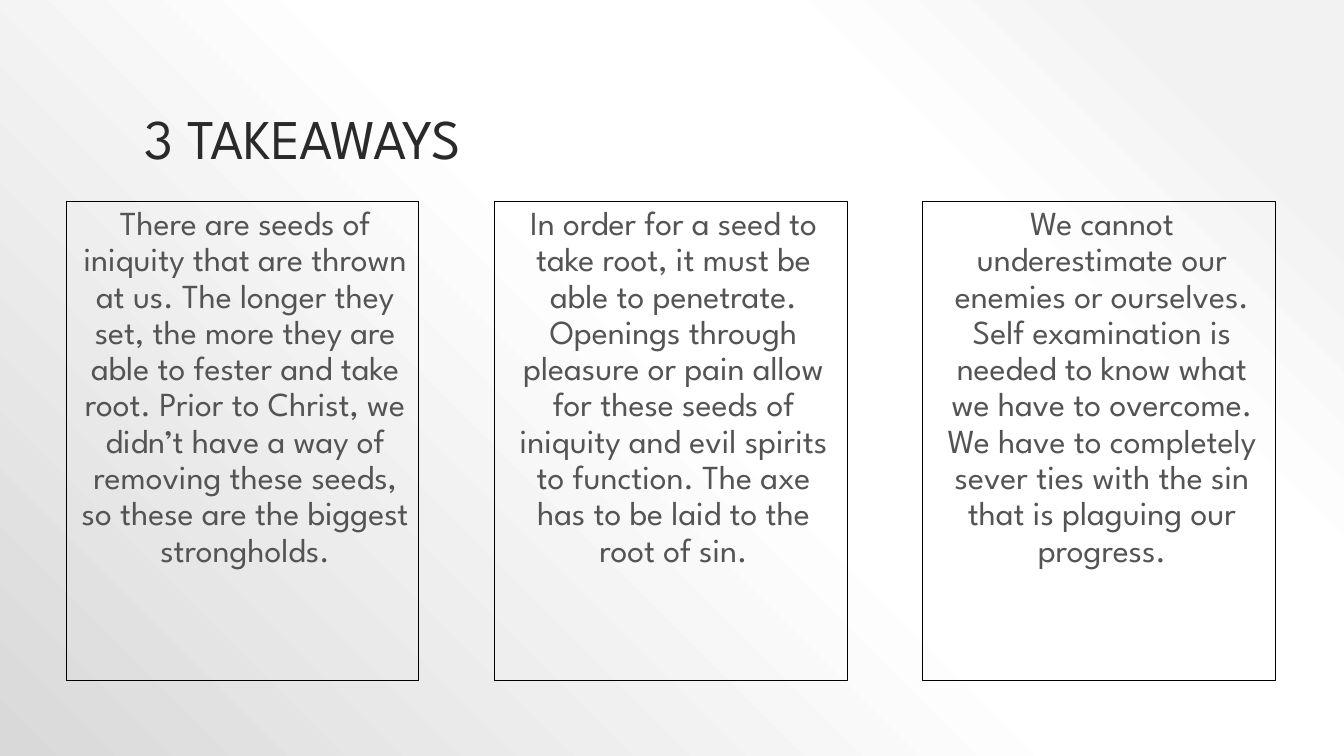
from pptx import Presentation
from pptx.dml.color import RGBColor
from pptx.enum.shapes import MSO_SHAPE
from pptx.enum.text import MSO_ANCHOR, MSO_AUTO_SIZE, PP_ALIGN
from pptx.oxml import parse_xml
from pptx.oxml.ns import nsdecls
from pptx.util import Pt

RECTANGLE = MSO_SHAPE.RECTANGLE
TOP, BOTTOM = MSO_ANCHOR.TOP, MSO_ANCHOR.BOTTOM
LEFT, CENTER = PP_ALIGN.LEFT, PP_ALIGN.CENTER
EMU_PER_PX = 9525  # 96 px to the inch
FONT = "League Spartan"
TITLE_COLOR, TEXT_COLOR, BORDER_COLOR = "2A2A2A", "545454", "000000"
BACKGROUND_STOPS = [(10, "F2F2F2"), (28, "FFFFFF"), (48, "FFFFFF"), (100, "D9D9D9")]
BOX_LEFT, BOX_TOP, BOX_WIDTH, BOX_HEIGHT, BOX_STEP = 63, 192, 336, 456, 408
TAKEAWAYS = [
    "There are seeds of iniquity that are thrown at us. The longer they set, "
    "the more they are able to fester and take root. Prior to Christ, we "
    "didn’t have a way of removing these seeds, so these are the biggest "
    "strongholds.",
    "In order for a seed to take root, it must be able to penetrate. Openings "
    "through pleasure or pain allow for these seeds of iniquity and evil "
    "spirits to function. The axe has to be laid to the root of sin.",
    "We cannot underestimate our enemies or ourselves. Self examination is "
    "needed to know what we have to overcome. We have to completely sever "
    "ties with the sin that is plaguing our progress.",
]


def px(length):
    return length * EMU_PER_PX


def write_text(shape, text, size, color, alignment, anchor):
    frame = shape.text_frame
    frame.text = text
    frame.word_wrap = True
    frame.auto_size = MSO_AUTO_SIZE.NONE
    frame.vertical_anchor = anchor
    paragraph = frame.paragraphs[0]
    paragraph.alignment = alignment
    paragraph.line_spacing = 0.9
    paragraph.font.name = FONT
    paragraph.font.size = Pt(size)
    paragraph.font.color.rgb = RGBColor.from_string(color)
    return paragraph


presentation = Presentation()
presentation.slide_width, presentation.slide_height = px(1280), px(720)
slide = presentation.slides.add_slide(presentation.slide_layouts[5])

# Background: circular gradient centred on the top right corner
stops = "".join(
    f'<a:gs pos="{position * 1000}"><a:srgbClr val="{color}"/></a:gs>'
    for position, color in BACKGROUND_STOPS
)
background = parse_xml(
    f'<p:bg {nsdecls("p", "a")}><p:bgPr><a:gradFill rotWithShape="1">'
    f'<a:gsLst>{stops}</a:gsLst>'
    '<a:path path="circle"><a:fillToRect l="100000" b="100000"/></a:path>'
    '</a:gradFill><a:effectLst/></p:bgPr></p:bg>'
)
slide.element.cSld.insert(0, background)

# Title
title = slide.shapes.title
title.left, title.top, title.width, title.height = px(128), px(29), px(1024), px(168 - 29)
title.height = px(139)
write_text(title, "3 TAKEAWAYS", 40, TITLE_COLOR, LEFT, BOTTOM)

# Takeaway boxes
for column, takeaway in enumerate(TAKEAWAYS):
    box = slide.shapes.add_shape(
        RECTANGLE, px(BOX_LEFT + column * BOX_STEP), px(BOX_TOP), px(BOX_WIDTH), px(BOX_HEIGHT)
    )
    box.shadow.inherit = False
    box.fill.background()
    box.line.color.rgb = RGBColor.from_string(BORDER_COLOR)
    box.line.width = Pt(0.75)
    paragraph = write_text(box, takeaway, 24, TEXT_COLOR, CENTER, TOP)
    paragraph.space_before = Pt(18)
    paragraph_properties = paragraph._p.get_or_add_pPr()
    paragraph_properties.set("marL", str(px(5)))
    paragraph_properties.set("indent", "0")

presentation.save("out.pptx")
